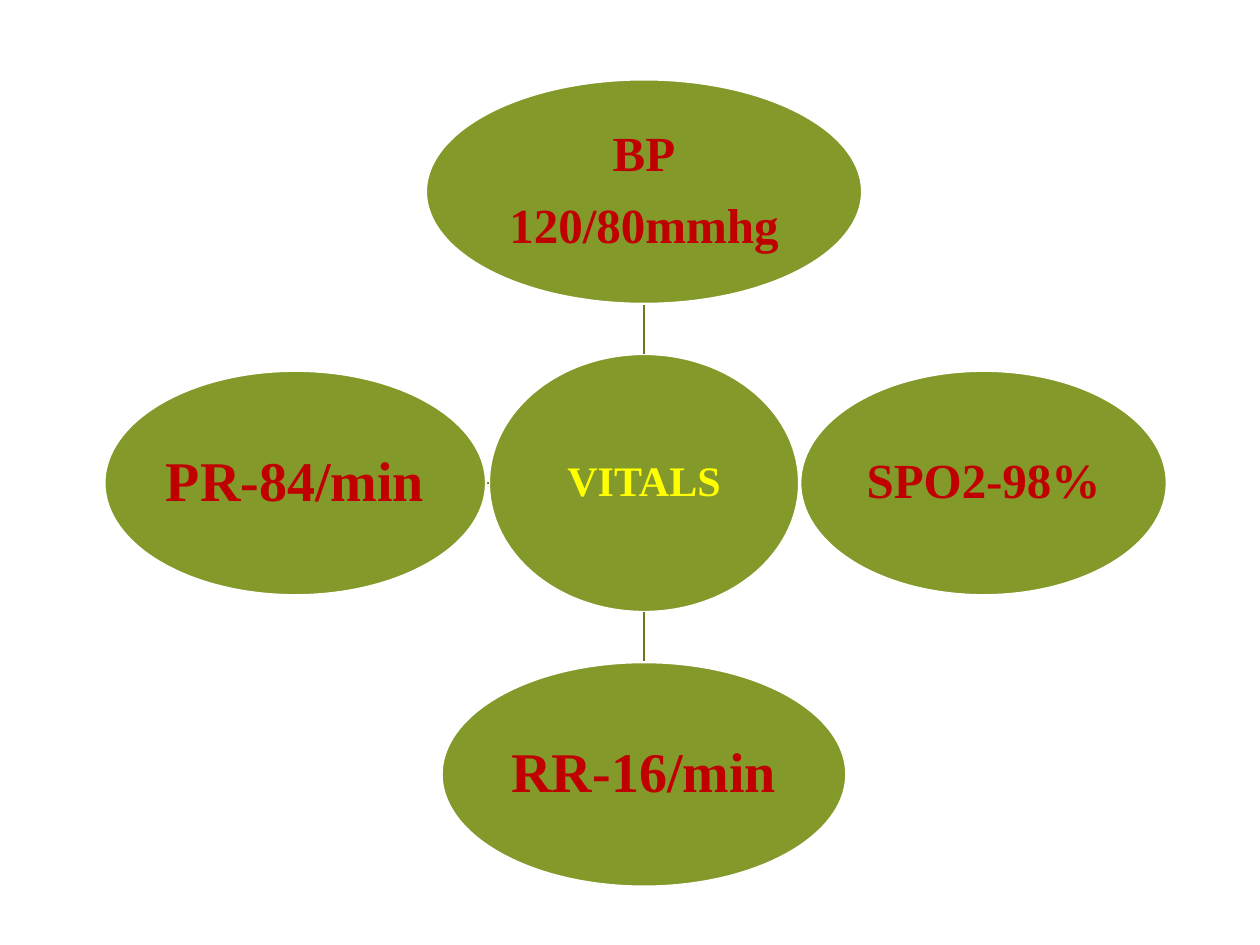
from dataclasses import dataclass

from lxml.etree import SubElement
from pptx import Presentation
from pptx.dml.color import RGBColor
from pptx.enum.shapes import MSO_CONNECTOR as Connector, MSO_SHAPE as Shape
from pptx.enum.text import MSO_ANCHOR as Anchor, PP_ALIGN as Align
from pptx.oxml.ns import qn
from pptx.slide import Slide
from pptx.util import Pt

COLORS = {
    "olive": "83992A",
    "spoke": "697B22",
    "outline": "FFFFFF",
    "hub_text": "FFFF00",
    "reading_text": "C00000",
}
FONT = "Times New Roman"
LINE_WIDTH = 1.25
INSET = 1.4
READING_HEIGHT = 128.2


@dataclass(frozen=True)
class Bubble:
    lines: tuple[str, ...]
    x: float  # centre
    y: float  # centre
    width: float
    height: float = READING_HEIGHT
    size: int = 28
    color: str = "reading_text"


HUB = Bubble(("VITALS",), 368, 276, 177.2, 147.4, 24, "hub_text")
READINGS = (
    Bubble(("BP", "120/80mmhg"), HUB.x, HUB.y - 166.5, 249.2),
    Bubble(("SPO2-98%",), 562, HUB.y, 209.4),
    Bubble(("RR-16/min",), HUB.x, HUB.y + 166.5, 231.2, size=32),
    Bubble(("PR-84/min",), 168.7, HUB.y, 218, size=32),
)


def rgb(name: str) -> RGBColor:
    return RGBColor.from_string(COLORS[name])


def draw_bubble(slide: Slide, bubble: Bubble) -> None:
    shape = slide.shapes.add_shape(
        Shape.OVAL,
        Pt(bubble.x - bubble.width / 2), Pt(bubble.y - bubble.height / 2),
        Pt(bubble.width), Pt(bubble.height),
    )
    shape.shadow.inherit = False
    shape.fill.solid()
    shape.fill.fore_color.rgb = rgb("olive")
    shape.line.color.rgb = rgb("outline")
    shape.line.width = Pt(LINE_WIDTH)

    frame = shape.text_frame
    frame.word_wrap = True
    frame.vertical_anchor = Anchor.MIDDLE
    frame.margin_left = frame.margin_right = Pt(INSET)
    frame.margin_top = frame.margin_bottom = Pt(INSET)
    for index, line in enumerate(bubble.lines):
        paragraph = frame.add_paragraph() if index else frame.paragraphs[0]
        paragraph.alignment = Align.CENTER
        paragraph.line_spacing = 0.9
        if index:
            paragraph.space_before = Pt(11)
        run = paragraph.add_run()
        run.text = line
        run.font.name = FONT
        run.font.size = Pt(bubble.size)
        run.font.bold = True
        run.font.color.rgb = rgb(bubble.color)


def draw_spoke(slide: Slide, hub: Bubble, reading: Bubble) -> None:
    """Join the facing edges of the hub and a reading on one of its axes."""
    across = (reading.x > hub.x) - (reading.x < hub.x)
    down = (reading.y > hub.y) - (reading.y < hub.y)
    connector = slide.shapes.add_connector(
        Connector.STRAIGHT,
        Pt(hub.x + across * hub.width / 2),
        Pt(hub.y + down * hub.height / 2),
        Pt(reading.x - across * reading.width / 2),
        Pt(reading.y - down * reading.height / 2),
    )
    connector.line.color.rgb = rgb("spoke")
    connector.line.width = Pt(LINE_WIDTH)
    SubElement(connector._element.spPr, qn("a:effectLst"))


def main() -> None:
    presentation = Presentation()
    presentation.slide_width = Pt(720)
    presentation.slide_height = Pt(540)
    slide = presentation.slides.add_slide(presentation.slide_layouts[6])
    draw_bubble(slide, HUB)
    for reading in READINGS:
        draw_spoke(slide, HUB, reading)
        draw_bubble(slide, reading)
    presentation.save("out.pptx")


if __name__ == "__main__":
    main()
